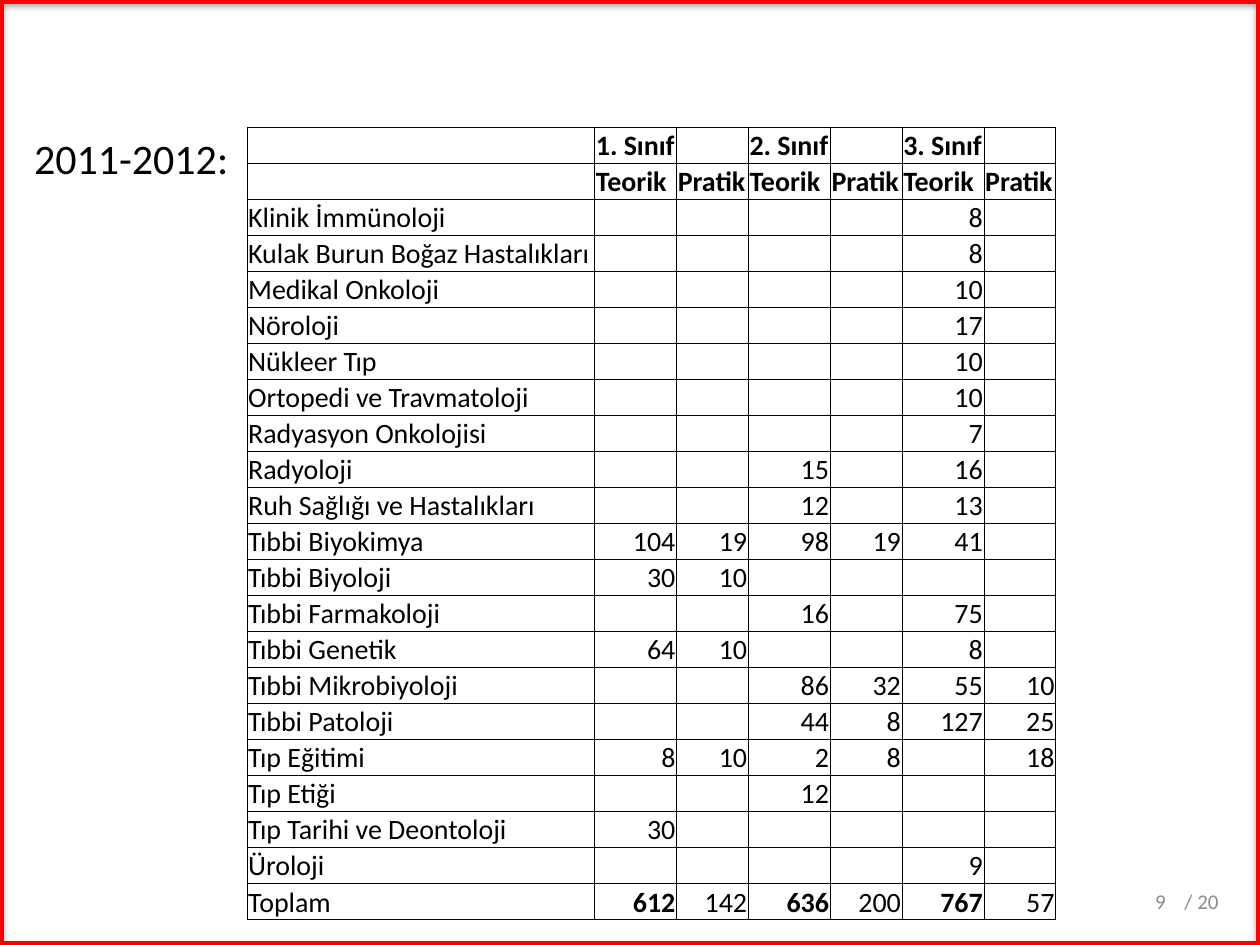
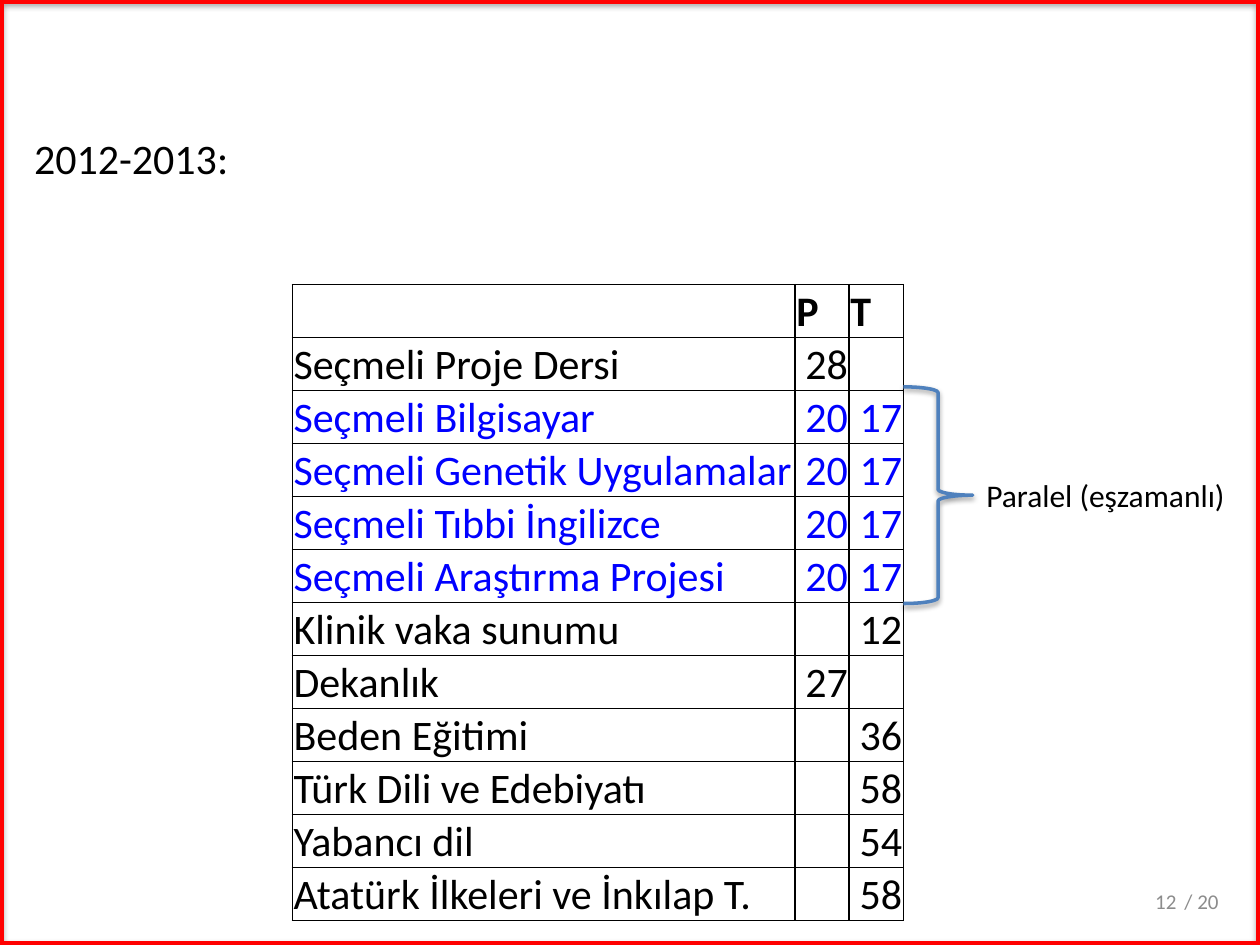
import pptx
import pptx.util
import pptx.dml.color
import pptx.enum.shapes
import pptx.enum.text
import pptx.oxml
import pptx.oxml.ns
import lxml.etree

Inches = pptx.util.Inches
Pt = pptx.util.Pt
RGBColor = pptx.dml.color.RGBColor
Align = pptx.enum.text.PP_ALIGN
Anchor = pptx.enum.text.MSO_ANCHOR
Shape = pptx.enum.shapes.MSO_SHAPE
qn = pptx.oxml.ns.qn

FONT = "Calibri"
BLACK = RGBColor(0x00, 0x00, 0x00)
BLUE = RGBColor(0x00, 0x00, 0xFF)
RED = RGBColor(0xFF, 0x00, 0x00)
GRAY = RGBColor(0x8C, 0x8C, 0x8C)
BRACE_BLUE = RGBColor(0x4F, 0x81, 0xBD)

PAGE_TOTAL = "/ 20"

CLASS_HOURS = {
    "rows": [
        ("", "1. Sınıf", "", "2. Sınıf", "", "3. Sınıf", ""),
        ("", "Teorik", "Pratik", "Teorik", "Pratik", "Teorik", "Pratik"),
        ("Klinik İmmünoloji", "", "", "", "", 8, ""),
        ("Kulak Burun Boğaz Hastalıkları", "", "", "", "", 8, ""),
        ("Medikal Onkoloji", "", "", "", "", 10, ""),
        ("Nöroloji", "", "", "", "", 17, ""),
        ("Nükleer Tıp", "", "", "", "", 10, ""),
        ("Ortopedi ve Travmatoloji", "", "", "", "", 10, ""),
        ("Radyasyon Onkolojisi", "", "", "", "", 7, ""),
        ("Radyoloji", "", "", 15, "", 16, ""),
        ("Ruh Sağlığı ve Hastalıkları", "", "", 12, "", 13, ""),
        ("Tıbbi Biyokimya", 104, 19, 98, 19, 41, ""),
        ("Tıbbi Biyoloji", 30, 10, "", "", "", ""),
        ("Tıbbi Farmakoloji", "", "", 16, "", 75, ""),
        ("Tıbbi Genetik", 64, 10, "", "", 8, ""),
        ("Tıbbi Mikrobiyoloji", "", "", 86, 32, 55, 10),
        ("Tıbbi Patoloji", "", "", 44, 8, 127, 25),
        ("Tıp Eğitimi", 8, 10, 2, 8, "", 18),
        ("Tıp Etiği", "", "", 12, "", "", ""),
        ("Tıp Tarihi ve Deontoloji", 30, "", "", "", "", ""),
        ("Üroloji", "", "", "", "", 9, ""),
        ("Toplam", 612, 142, 636, 200, 767, 57),
    ],
    "left": 1.96, "top": 1.01, "height": 6.29,
    "columns": [2.76] + [0.65, 0.57] * 3,
    "size": 16, "border": 0.5,
    "bold_cells": {(21, 1), (21, 3), (21, 5)},
    "header_rows": 2, "blue_rows": (),
}

ELECTIVE_HOURS = {
    "rows": [
        ("", "P", "T"),
        ("Seçmeli Proje Dersi", 28, ""),
        ("Seçmeli Bilgisayar", 20, 17),
        ("Seçmeli Genetik Uygulamalar", 20, 17),
        ("Seçmeli Tıbbi İngilizce", 20, 17),
        ("Seçmeli Araştırma Projesi", 20, 17),
        ("Klinik vaka sunumu", "", 12),
        ("Dekanlık", 27, ""),
        ("Beden Eğitimi", "", 36),
        ("Türk Dili ve Edebiyatı", "", 58),
        ("Yabancı dil", "", 54),
        ("Atatürk İlkeleri ve İnkılap T.", "", 58),
    ],
    "left": 2.32, "top": 2.26, "height": 5.05,
    "columns": [3.99, 0.43, 0.43],
    "size": 24, "border": 1,
    "bold_cells": set(),
    "header_rows": 1, "blue_rows": range(2, 6),
}

PAGES = [
    ("2011-2012:", "9", CLASS_HOURS, None),
    ("2012-2013:", "12", ELECTIVE_HOURS, "Paralel (eşzamanlı)"),
]


def place(shape, left, top, width, height):
    shape.left, shape.top = Inches(left), Inches(top)
    shape.width, shape.height = Inches(width), Inches(height)


def write(frame, text, size, color=BLACK, bold=False, align=Align.LEFT):
    frame.text = str(text)
    para = frame.paragraphs[0]
    para.alignment = align
    for span in para.runs:
        span.font.name = FONT
        span.font.size = Pt(size)
        span.font.bold = bold
        span.font.color.rgb = color
    if not para.runs:
        end = lxml.etree.SubElement(para._p, qn("a:endParaRPr"))
        end.set("sz", str(size * 100))


def add_label(page, text, spot, size, color=BLACK, align=Align.LEFT,
              anchor=Anchor.TOP, wrap=False):
    box = page.shapes.add_textbox(*map(Inches, spot))
    box.text_frame.word_wrap = wrap
    box.text_frame.vertical_anchor = anchor
    write(box.text_frame, text, size, color, align=align)


def add_outline(page, kind, spot, color, width, opacity):
    shape = page.shapes.add_shape(kind, *map(Inches, spot))
    shape.fill.background()
    shape.line.color.rgb = color
    shape.line.width = Pt(width)
    shape.shadow.inherit = False
    effects = shape._element.spPr.find(qn("a:effectLst"))
    shadow = lxml.etree.SubElement(
        effects, qn("a:outerShdw"), blurRad=str(Pt(3.1)), dist=str(Pt(1.7)),
        dir="5400000", rotWithShape="0")
    tint = lxml.etree.SubElement(shadow, qn("a:srgbClr"), val=str(BLACK))
    lxml.etree.SubElement(tint, qn("a:alpha"), val=str(opacity * 1000))
    return shape


def add_borders(cell, width):
    properties = cell._tc.get_or_add_tcPr()
    for position, side in enumerate(("a:lnL", "a:lnR", "a:lnT", "a:lnB")):
        line = lxml.etree.Element(qn(side), w=str(Pt(width)))
        fill = lxml.etree.SubElement(line, qn("a:solidFill"))
        lxml.etree.SubElement(fill, qn("a:srgbClr"), val=str(BLACK))
        properties.insert(position, line)


def add_hours(page, hours):
    rows, columns = hours["rows"], hours["columns"]
    table = page.shapes.add_table(
        len(rows), len(columns), Inches(hours["left"]), Inches(hours["top"]),
        Inches(sum(columns)), Inches(hours["height"])).table
    table.first_row = table.horz_banding = False
    for column, width in zip(table.columns, columns):
        column.width = Inches(width)
    for r, values in enumerate(rows):
        table.rows[r].height = Inches(hours["height"] / len(rows))
        for c, value in enumerate(values):
            cell = table.cell(r, c)
            cell.fill.background()
            cell.margin_left = cell.margin_right = cell.margin_top = Inches(0.01)
            cell.margin_bottom = 0
            cell.vertical_anchor = Anchor.BOTTOM
            write(cell.text_frame, value, hours["size"],
                  BLUE if r in hours["blue_rows"] else BLACK,
                  r < hours["header_rows"] or (r, c) in hours["bold_cells"],
                  Align.RIGHT if isinstance(value, int) else Align.LEFT)
            add_borders(cell, hours["border"])


def add_year(page, year):
    title = page.shapes.title
    place(title, 0.17, 1, 1.76, 0.5)
    frame = title.text_frame
    frame.word_wrap = False
    frame.auto_size = pptx.enum.text.MSO_AUTO_SIZE.NONE
    frame.vertical_anchor = Anchor.TOP
    write(frame, year, 24)


def add_footer(page, number):
    for text, left, align in ((PAGE_TOTAL, 8.84, Align.RIGHT),
                              (number, 9.07, Align.LEFT)):
        add_label(page, text, (left, 6.95, 0.93, 0.4), 12, GRAY, align,
                  Anchor.MIDDLE, True)


def main():
    deck = pptx.Presentation()
    deck.slide_width, deck.slide_height = Inches(10), Inches(7.5)
    for year, number, hours, brace_label in PAGES:
        page = deck.slides.add_slide(deck.slide_layouts[5])
        add_year(page, year)
        add_hours(page, hours)
        add_footer(page, number)
        if brace_label:
            add_outline(page, Shape.RIGHT_BRACE, (7.17, 3.07, 0.55, 1.72),
                        BRACE_BLUE, 2, 38)
            add_label(page, brace_label, (7.73, 3.73, 2.13, 0.4), 18)
    frame = add_outline(page, Shape.RECTANGLE, (0, 0, 10, 7.5), RED, 4.5, 35)
    deck.slide_master.shapes.element.append(frame.element)
    deck.save("out.pptx")


if __name__ == "__main__":
    main()
